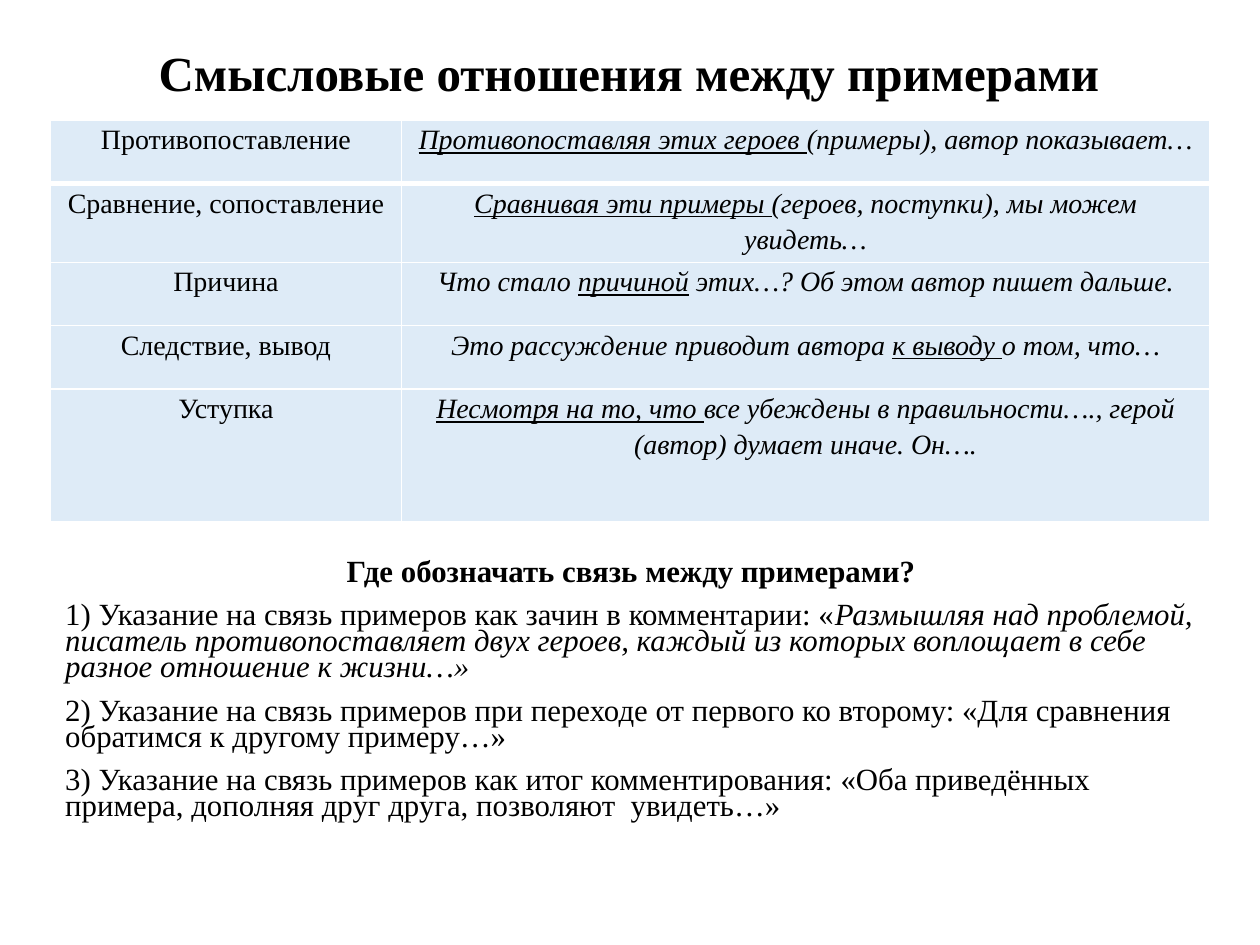
import dataclasses

import lxml.etree
import pptx
import pptx.dml.color
import pptx.enum.text
import pptx.oxml.ns
import pptx.util

Pt = pptx.util.Pt
ALIGN = pptx.enum.text.PP_ALIGN
ANCHOR = pptx.enum.text.MSO_ANCHOR


@dataclasses.dataclass(frozen=True)
class Theme:
    """Colours, font and type sizes of the slide."""
    font: str = "Times New Roman"
    ink: str = "000000"
    cell: str = "DEEBF7"
    rule: str = "FFFFFF"
    title_size: float = 28
    table_size: float = 16
    body_size: float = 17.6


THEME = Theme()

TITLE = "Смысловые отношения между примерами"
RELATIONS = [
    ("Противопоставление",
     [("Противопоставляя этих героев ", "iu"), ("(примеры), автор показывает…", "i")]),
    ("Сравнение, сопоставление",
     [("Сравнивая эти примеры ", "iu"), ("(героев, поступки), мы можем увидеть…", "i")]),
    ("Причина",
     [("Что стало ", "i"), ("причиной", "iu"), (" этих…? Об этом автор пишет дальше.", "i")]),
    ("Следствие, вывод",
     [("Это рассуждение приводит автора ", "i"), ("к выводу ", "iu"), ("о том, что…", "i")]),
    ("Уступка",
     [("Несмотря на то, что ", "iu"),
      ("все убеждены в правильности…., герой (автор) думает иначе. Он….", "i")]),
]
QUESTION = "Где обозначать связь между примерами?"
PLACES = [
    [("1) Указание на связь примеров как зачин в комментарии: «", ""),
     ("Размышляя над проблемой, писатель противопоставляет двух героев, "
      "каждый из которых воплощает в себе разное отношение к жизни…»", "i")],
    [("2) Указание на связь примеров при переходе от первого ко второму: "
      "«Для сравнения обратимся к другому примеру…»", "")],
    [("3) Указание на связь примеров как итог комментирования: "
      "«Оба приведённых примера, дополняя друг друга, позволяют  увидеть…»", "")],
]


def write_paragraph(frame, runs, size, align=ALIGN.LEFT, spacing=1.0, before=0):
    """Add a paragraph of (text, style) runs, where style holds b, i or u."""
    paragraph = frame.paragraphs[0]
    if paragraph.runs:
        paragraph = frame.add_paragraph()
    paragraph.alignment = align
    paragraph.line_spacing = spacing
    paragraph.space_before = Pt(before)
    for text, style in runs:
        run = paragraph.add_run()
        run.text = text
        run.font.name = THEME.font
        run.font.size = Pt(size)
        run.font.color.rgb = pptx.dml.color.RGBColor.from_string(THEME.ink)
        run.font.bold = "b" in style
        run.font.italic = "i" in style
        run.font.underline = "u" in style


def place_title(slide, left, top, width, height):
    """Move the title placeholder into its box and fill it."""
    title = slide.shapes.title
    title.left, title.top, title.width, title.height = map(Pt, (left, top, width, height))
    title.text_frame.vertical_anchor = ANCHOR.BOTTOM
    write_paragraph(title.text_frame, [(TITLE, "b")], THEME.title_size, ALIGN.CENTER, 0.9)


def draw_borders(cell, bottom):
    """Rule the four sides of a cell, with its own width at the bottom."""
    properties = cell._tc.get_or_add_tcPr()
    qn = pptx.oxml.ns.qn
    for index, (side, width) in enumerate(zip("LRTB", (1, 1, 1, bottom))):
        line = lxml.etree.Element(qn(f"a:ln{side}"), w=str(int(Pt(width))))
        fill = lxml.etree.SubElement(line, qn("a:solidFill"))
        lxml.etree.SubElement(fill, qn("a:srgbClr"), val=THEME.rule)
        properties.insert(index, line)


def place_relations(slide, left, top, width, height):
    """Build the table of relations and their sample phrases."""
    table = slide.shapes.add_table(
        len(RELATIONS), 2, Pt(left), Pt(top), Pt(width), Pt(height)).table
    table.first_row = table.horz_banding = False
    label_width = 200.7
    table.columns[0].width = Pt(label_width)
    table.columns[1].width = Pt(width - label_width)
    plain_row, wrapped_row = 36.2, 45
    heights = [plain_row, wrapped_row, plain_row, plain_row]
    heights.append(height - sum(heights))
    for index, (label, phrase) in enumerate(RELATIONS):
        table.rows[index].height = Pt(heights[index])
        for column, runs in enumerate(([(label, "")], phrase)):
            cell = table.cell(index, column)
            cell.margin_left = cell.margin_right = Pt(5)
            cell.margin_top = cell.margin_bottom = 0
            cell.fill.solid()
            cell.fill.fore_color.rgb = pptx.dml.color.RGBColor.from_string(THEME.cell)
            draw_borders(cell, 3 if index == 0 else 1)
            write_paragraph(cell.text_frame, runs, THEME.table_size, ALIGN.CENTER, 1.15)


def place_advice(slide, left, top, width, height):
    """Write the question and the three places to mark the link."""
    frame = slide.shapes.add_textbox(Pt(left), Pt(top), Pt(width), Pt(height)).text_frame
    frame.word_wrap = True
    write_paragraph(frame, [(QUESTION, "b")], THEME.body_size, ALIGN.CENTER, 0.7, 10)
    for runs in PLACES:
        write_paragraph(frame, runs, THEME.body_size, spacing=0.7, before=10)


def main():
    """Build and save the slide."""
    deck = pptx.Presentation()
    deck.slide_width, deck.slide_height = Pt(720), Pt(540)
    slide = deck.slides.add_slide(deck.slide_layouts[5])
    place_title(slide, 49, 18.7, 620.6, 43.2)
    place_advice(slide, 30.2, 317.5, 661, 162)
    place_relations(slide, 28.8, 68.7, 662.4, 229.4)
    deck.save("out.pptx")


if __name__ == "__main__":
    main()
